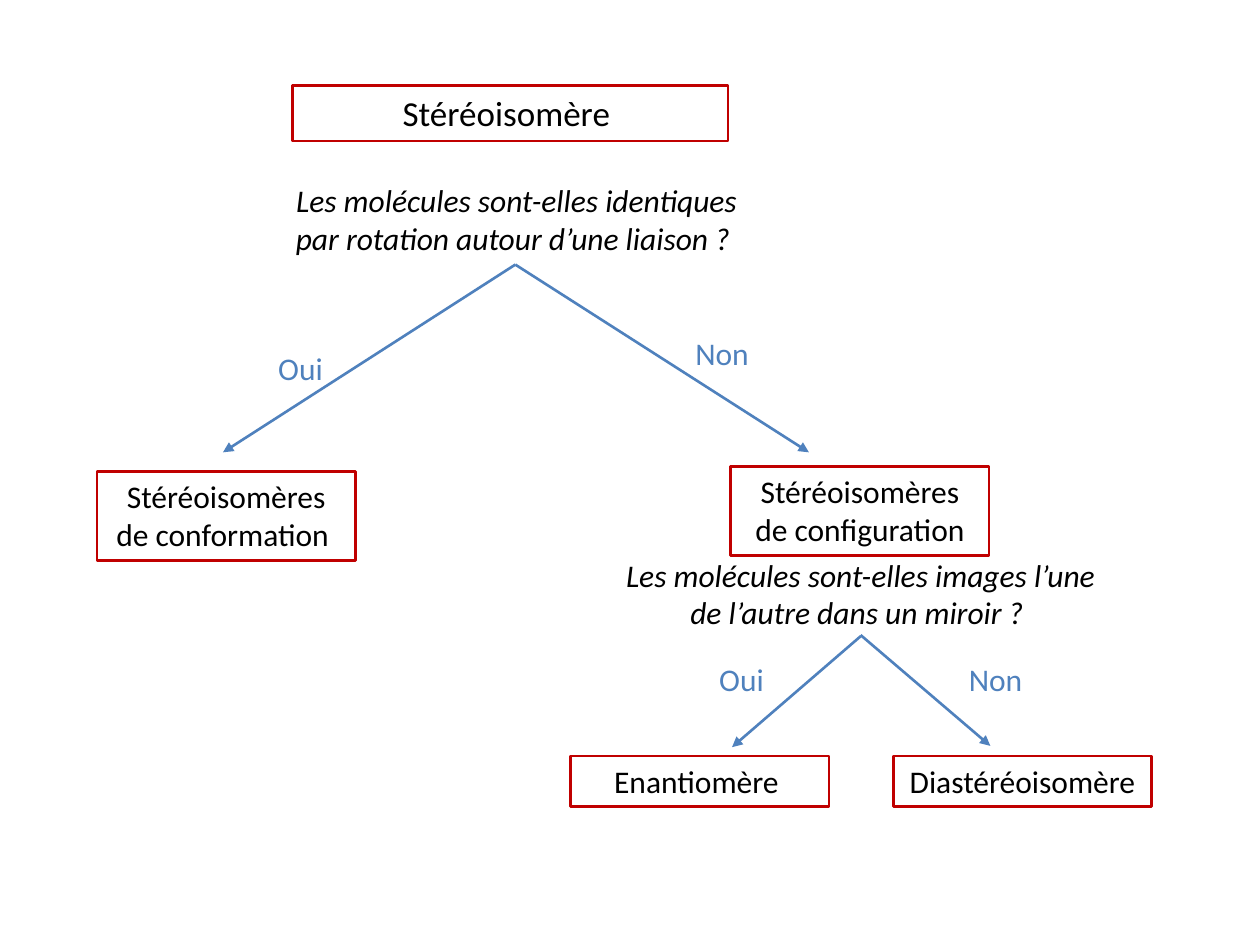
import dataclasses

import pptx
import pptx.dml.color
import pptx.enum.shapes
import pptx.enum.text
import pptx.oxml
import pptx.oxml.ns
import pptx.util

COLORS = {"text": "000000", "frame": "C00000", "branch": "4F81BD"}
FONT = "Calibri"
SLIDE_WIDTH = pptx.util.Inches(10)
SLIDE_HEIGHT = pptx.util.Inches(7.5)
COLUMNS, ROWS = 100, 75
ONE_LINE, TWO_LINES = 4, 7.1
CATEGORY_WIDTH, QUESTION_WIDTH, ANSWER_WIDTH = 20.5, 40.2, 14.2


@dataclasses.dataclass(frozen=True)
class Category:
    text: str
    column: float
    row: float
    height: float
    width: float = CATEGORY_WIDTH
    size: int = 18


@dataclasses.dataclass(frozen=True)
class Label:
    text: str
    column: float
    row: float


@dataclasses.dataclass(frozen=True)
class Branch:
    start: tuple[float, float]
    end: tuple[float, float]


CATEGORIES = [
    Category("Stéréoisomère ", 23.2, 6.8, 4.4, width=34.6, size=20),
    Category("Stéréoisomères de conformation ", 7.7, 37.4, TWO_LINES),
    Category("Stéréoisomères de configuration", 58, 37, TWO_LINES),
    Category("Enantiomère ", 45.3, 60, ONE_LINE),
    Category("Diastéréoisomère", 70.9, 60, ONE_LINE),
]
QUESTIONS = [
    Label("Les molécules sont-elles identiques par rotation autour d’une liaison ? ", 20.9, 13.9),
    Label("Les molécules sont-elles images l’une de l’autre dans un miroir ? ", 48.2, 43.6),
]
ANSWERS = [
    Label("Oui", 21.1, 27.2),
    Label("Non", 54.2, 26),
    Label("Oui", 56.1, 51.9),
    Label("Non", 75.9, 51.9),
]
BRANCHES = [
    Branch((40.9, 21), (17.7, 35.9)),
    Branch((40.9, 21), (64.2, 35.9)),
    Branch((68.3, 50.4), (78.6, 59.2)),
    Branch((68.3, 50.5), (58.1, 59.3)),
]


def across(columns: float) -> int:
    return round(SLIDE_WIDTH * columns / COLUMNS)


def down(rows: float) -> int:
    return round(SLIDE_HEIGHT * rows / ROWS)


def rgb(name: str) -> pptx.dml.color.RGBColor:
    return pptx.dml.color.RGBColor.from_string(COLORS[name])


def write(holder, text: str, *, size: int = 18, color: str = "text",
          italic: bool = False, centered: bool = True) -> None:
    frame = holder.text_frame
    frame.word_wrap = True
    frame.auto_size = pptx.enum.text.MSO_AUTO_SIZE.SHAPE_TO_FIT_TEXT
    frame.vertical_anchor = pptx.enum.text.MSO_ANCHOR.TOP
    paragraph = frame.paragraphs[0]
    alignments = pptx.enum.text.PP_ALIGN
    paragraph.alignment = alignments.CENTER if centered else alignments.LEFT
    run = paragraph.add_run()
    run.text = text
    run.font.name = FONT
    run.font.size = pptx.util.Pt(size)
    run.font.italic = italic
    run.font.color.rgb = rgb(color)


def draw_category(slide, category: Category) -> None:
    box = slide.shapes.add_shape(
        pptx.enum.shapes.MSO_SHAPE.RECTANGLE,
        across(category.column), down(category.row),
        across(category.width), down(category.height))
    box.shadow.inherit = False
    box.fill.background()
    box.line.color.rgb = rgb("frame")
    box.line.width = pptx.util.Pt(1.5)
    write(box, category.text, size=category.size)


def draw_question(slide, question: Label) -> None:
    holder = slide.shapes.add_textbox(
        across(question.column), down(question.row),
        across(QUESTION_WIDTH), down(TWO_LINES))
    write(holder, question.text, italic=True)


def draw_answer(slide, answer: Label) -> None:
    holder = slide.shapes.add_textbox(
        across(answer.column), down(answer.row),
        across(ANSWER_WIDTH), down(ONE_LINE))
    write(holder, answer.text, color="branch", centered=False)


def draw_branch(slide, branch: Branch) -> None:
    arrow = slide.shapes.add_connector(
        pptx.enum.shapes.MSO_CONNECTOR.STRAIGHT,
        across(branch.start[0]), down(branch.start[1]),
        across(branch.end[0]), down(branch.end[1]))
    arrow.line.color.rgb = rgb("branch")
    arrow.line.width = pptx.util.Pt(1.5)
    namespace = pptx.oxml.ns.nsdecls("a")
    outline = arrow.line.fill._xPr
    outline.append(pptx.oxml.parse_xml(f'<a:tailEnd {namespace} type="triangle"/>'))
    outline.getparent().append(pptx.oxml.parse_xml(f"<a:effectLst {namespace}/>"))


def main() -> None:
    deck = pptx.Presentation()
    deck.slide_width, deck.slide_height = SLIDE_WIDTH, SLIDE_HEIGHT
    slide = deck.slides.add_slide(deck.slide_layouts[6])
    for draw, items in (
        (draw_category, CATEGORIES),
        (draw_question, QUESTIONS),
        (draw_branch, BRANCHES),
        (draw_answer, ANSWERS),
    ):
        for item in items:
            draw(slide, item)
    deck.save("out.pptx")


if __name__ == "__main__":
    main()
